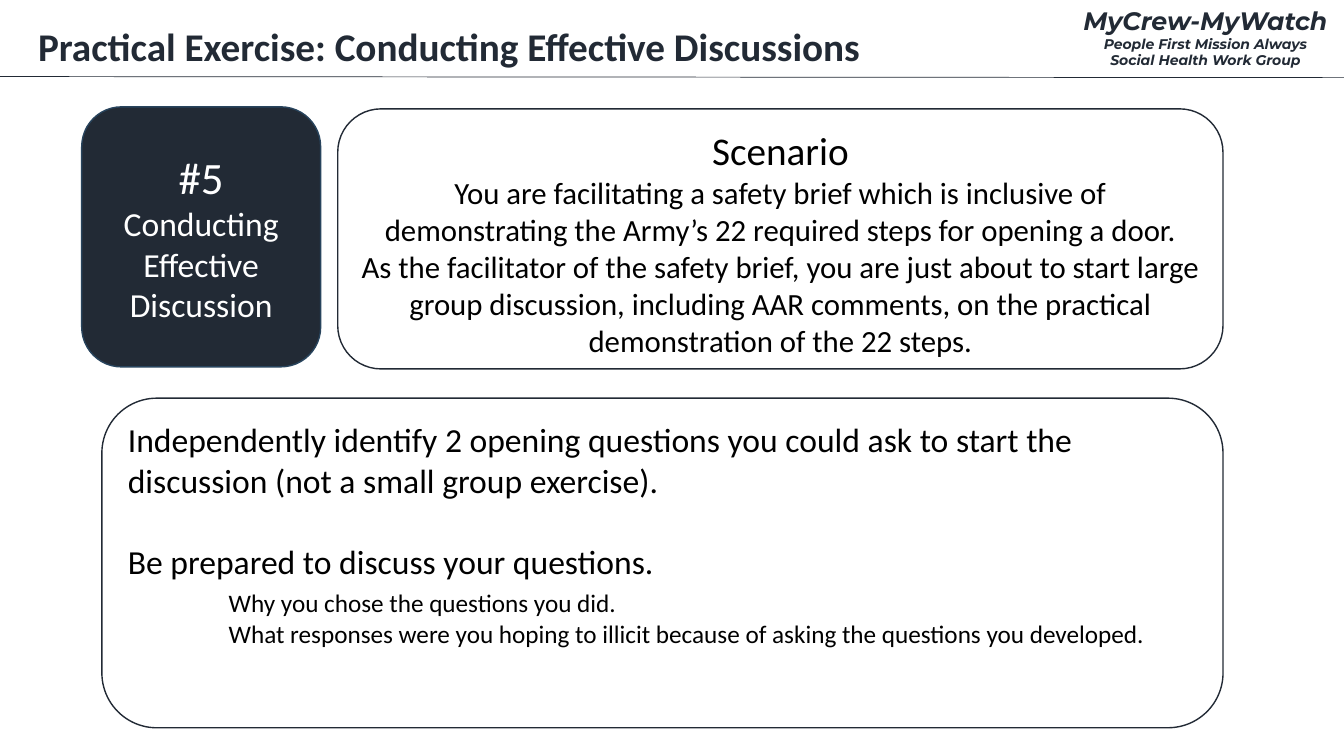
from pptx import Presentation
from pptx.dml.color import RGBColor
from pptx.enum.shapes import MSO_CONNECTOR, MSO_SHAPE
from pptx.enum.text import MSO_ANCHOR as Anchor, PP_ALIGN as Align
from pptx.oxml.ns import qn
from pptx.util import Inches, Pt
from lxml import etree

COLORS = {"navy": "222A35", "edge": "28445D", "white": "FFFFFF", "black": "000000"}

prs = Presentation()
prs.slide_width, prs.slide_height = Inches(13.33), Inches(7.5)
s = prs.slides.add_slide(prs.slide_layouts[6])

# The grid has 100 columns and 100 rows
COL, ROW = prs.slide_width / 100, prs.slide_height / 100


def rgb(name):
    return RGBColor.from_string(COLORS[name])


def add_text(sp, lines, color, align, font="Calibri", bold=False, italic=False):
    """Fill sp with lines of (text, size, space before, left indent in columns)."""
    tf = sp.text_frame
    tf.word_wrap = True
    for i, (text, size, before, indent) in enumerate(lines):
        p = tf.paragraphs[0] if i == 0 else tf.add_paragraph()
        p.alignment = align
        p.space_before = Pt(before)
        if indent:
            pPr = p._p.get_or_add_pPr()
            pPr.set("marL", str(round(indent * COL)))
            pPr.set("indent", "0")
        r = p.add_run()
        r.text = text
        r.font.name, r.font.size = font, Pt(size)
        r.font.bold, r.font.italic = bold, italic
        r.font.color.rgb = rgb(color)


# Header: group name, title and rule
headers = [
    ((79.37, 0, 20.63, 9.87), Align.CENTER, "Montserrat", True,
     [("MyCrew-MyWatch", 18, 0, 0),
      ("People First Mission Always", 10, 0, 0),
      ("Social Health Work Group", 10, 0, 0)]),
    ((2.1, 2.27, 80.12, 7.6), Align.LEFT, "Calibri", False,
     [("Practical Exercise: Conducting Effective Discussions", 28, 0, 0)]),
]
for (x, y, w, h), align, font, italic, lines in headers:
    sp = s.shapes.add_textbox(round(x * COL), round(y * ROW), round(w * COL), round(h * ROW))
    add_text(sp, lines, "navy", align, font, True, italic)

rule = s.shapes.add_connector(MSO_CONNECTOR.STRAIGHT, 0, round(10.13 * ROW),
                              prs.slide_width, round(10.27 * ROW))
rule.line.color.rgb = rgb("navy")
rule.line.width = Pt(0.5)
etree.SubElement(rule._element.spPr, qn("a:effectLst"))

# Rounded panels: exercise number, scenario and task
panels = [
    ((6.08, 14.13, 17.78, 34.4), "navy", "edge", "white", Align.CENTER, Anchor.MIDDLE,
     [("#5", 32, 0, 0),
      ("Conducting Effective Discussion", 24, 0, 0)]),
    ((25.13, 14.4, 65.87, 34.4), None, "navy", "black", Align.CENTER, Anchor.TOP,
     [("Scenario", 28, 0, 0),
      ("You are facilitating a safety brief which is inclusive of demonstrating "
       "the Army’s 22 required steps for opening a door.", 22, 0, 0),
      ("As the facilitator of the safety brief, you are just about to start large "
       "group discussion, including AAR comments, on the practical demonstration "
       "of the 22 steps.", 22, 0, 0)]),
    ((7.58, 52.67, 83.42, 43.6), None, "navy", "black", Align.LEFT, Anchor.TOP,
     [("Independently identify 2 opening questions you could ask to start the "
       "discussion (not a small group exercise).", 24, 0, 0),
      ("Be prepared to discuss your questions.", 24, 29, 0),
      ("Why you chose the questions you did.", 18, 5, 7.5),
      ("What responses were you hoping to illicit because of asking the questions "
       "you developed.", 18, 0, 7.5)]),
]
for (x, y, w, h), fill, line, color, align, anchor, lines in panels:
    sp = s.shapes.add_shape(MSO_SHAPE.ROUNDED_RECTANGLE, round(x * COL), round(y * ROW),
                            round(w * COL), round(h * ROW))
    sp.shadow.inherit = False
    if fill:
        sp.fill.solid()
        sp.fill.fore_color.rgb = rgb(fill)
    else:
        sp.fill.background()
    sp.line.color.rgb = rgb(line)
    sp.line.width = Pt(1)
    sp.text_frame.vertical_anchor = anchor
    add_text(sp, lines, color, align)

prs.save("out.pptx")
